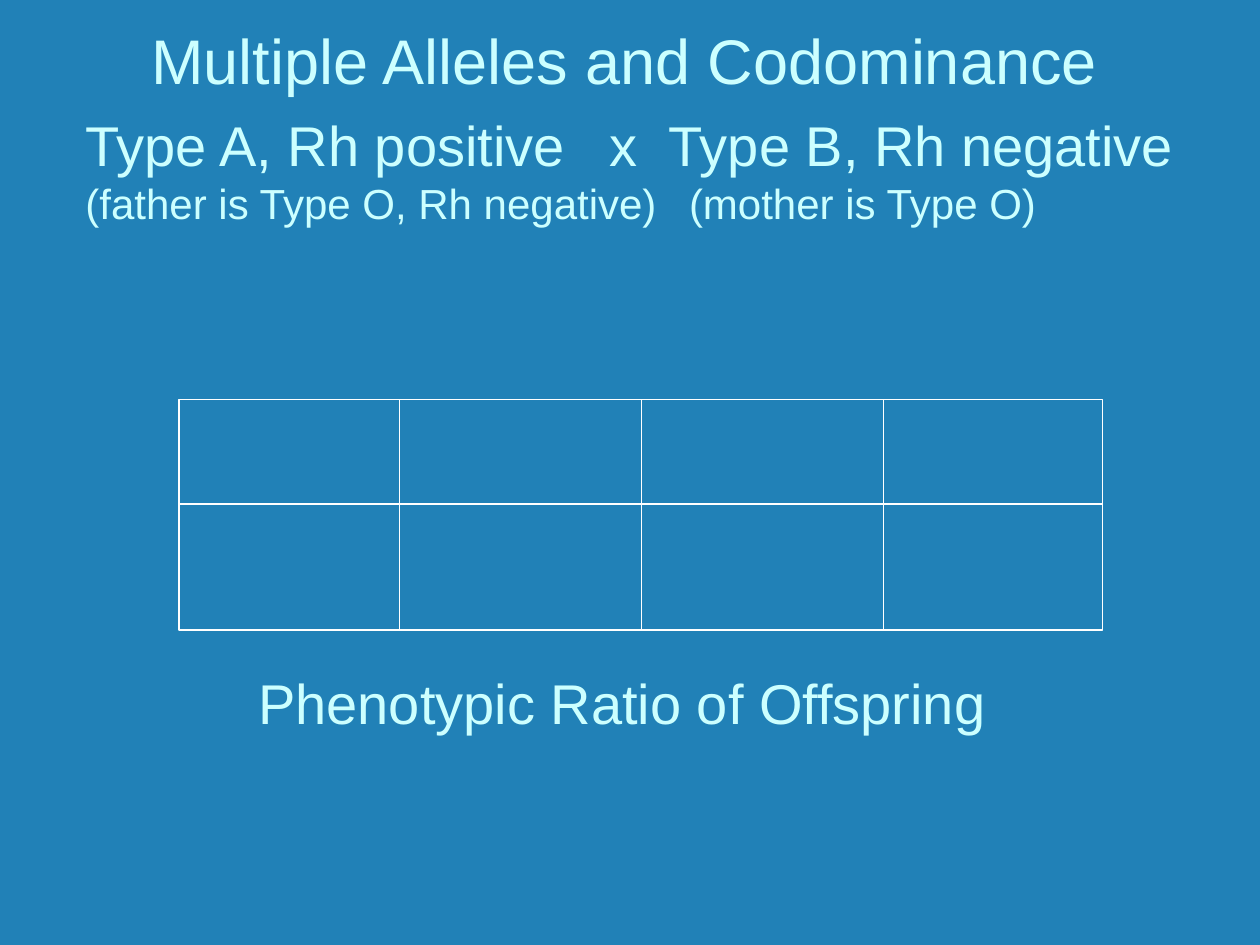
from dataclasses import dataclass

from lxml.etree import SubElement
from pptx import Presentation
from pptx.dml.color import RGBColor
from pptx.enum.shapes import MSO_CONNECTOR, MSO_SHAPE
from pptx.enum.text import MSO_ANCHOR, MSO_AUTO_SIZE, PP_ALIGN
from pptx.oxml.ns import qn
from pptx.util import Inches, Pt


@dataclass(frozen=True)
class Theme:
    background: RGBColor = RGBColor(0x21, 0x81, 0xB7)
    text: RGBColor = RGBColor(0xCC, 0xFF, 0xFF)
    line: RGBColor = RGBColor(0xFF, 0xFF, 0xFF)
    font: str = "Arial"
    title_size: int = 36
    heading_size: int = 32
    note_size: int = 24
    line_width: float = 0.75


@dataclass(frozen=True)
class Box:
    left: float
    top: float
    width: float
    height: float

    def lengths(self):
        return [Inches(n) for n in (self.left, self.top, self.width, self.height)]


THEME = Theme()


def format_para(para, size, align=PP_ALIGN.LEFT):
    para.alignment = align
    for span in para.runs:
        span.font.name = THEME.font
        span.font.size = Pt(size)
        span.font.color.rgb = THEME.text


def set_tab_stops(para, positions):
    """Put left tab stops at the given inches from the text edge."""
    tab_list = SubElement(para._p.get_or_add_pPr(), qn("a:tabLst"))
    for position in positions:
        SubElement(tab_list, qn("a:tab"), pos=str(Inches(position)), algn="l")


def add_title(page, box):
    title = page.shapes.title
    title.left, title.top, title.width, title.height = box.lengths()
    frame = title.text_frame
    frame.text = "Multiple Alleles and Codominance"
    frame.auto_size = MSO_AUTO_SIZE.NONE
    frame.vertical_anchor = MSO_ANCHOR.BOTTOM
    frame.margin_right = Inches(0.27)
    frame.margin_bottom = Inches(0.06)
    format_para(frame.paragraphs[0], THEME.title_size, PP_ALIGN.CENTER)


def add_text_frame(page, box):
    frame = page.shapes.add_textbox(*box.lengths()).text_frame
    frame.word_wrap = True
    return frame


def add_cross(page, box):
    """Write the two parents, with their family notes below."""
    frame = add_text_frame(page, box)
    frame.margin_right = 0
    rows = [
        ("Type A, Rh positive\tx\tType B, Rh negative", THEME.heading_size, [4.16, 4.63]),
        ("(father is Type O, Rh negative)\t(mother is Type O)", THEME.note_size, [4.79]),
    ]
    frame.text = "\n".join(text for text, _, _ in rows)
    for para, (_, size, stops) in zip(frame.paragraphs, rows):
        format_para(para, size)
        set_tab_stops(para, stops)


def add_ratio_heading(page, box):
    frame = add_text_frame(page, box)
    frame.margin_left = Inches(0.72)
    frame.text = "Phenotypic Ratio of Offspring"
    format_para(frame.paragraphs[0], THEME.heading_size)


def format_line(line):
    line.color.rgb = THEME.line
    line.width = Pt(THEME.line_width)


def add_punnett_square(page, box, column_edges, row_edges):
    """Draw an empty grid; the edges are offsets from the box's corner."""
    square = page.shapes.add_group_shape()
    frame = square.shapes.add_shape(MSO_SHAPE.RECTANGLE, *box.lengths())
    frame.shadow.inherit = False
    frame.fill.background()
    format_line(frame.line)

    right, bottom = box.left + box.width, box.top + box.height
    columns = [(box.left + x, box.top, box.left + x, bottom) for x in column_edges]
    rows = [(box.left, box.top + y, right, box.top + y) for y in row_edges]
    for ends in columns + rows:
        rule = square.shapes.add_connector(
            MSO_CONNECTOR.STRAIGHT, *[Inches(n) for n in ends])
        format_line(rule.line)
        SubElement(rule._element.spPr, qn("a:effectLst"))


def main():
    deck = Presentation()
    deck.slide_width, deck.slide_height = Inches(10), Inches(7.5)
    page = deck.slides.add_slide(deck.slide_layouts.get_by_name("Title Only"))
    page.background.fill.solid()
    page.background.fill.fore_color.rgb = THEME.background

    add_title(page, Box(0.25, 0, 9.58, 0.83))
    add_cross(page, Box(0.58, 0.83, 8.92, 1.03))
    add_ratio_heading(page, Box(1.33, 5.26, 7.67, 0.63))
    add_punnett_square(page, Box(1.42, 3.17, 7.33, 1.83),
                       column_edges=[1.75, 3.67, 5.59], row_edges=[0.83])
    deck.save("out.pptx")


if __name__ == "__main__":
    main()
